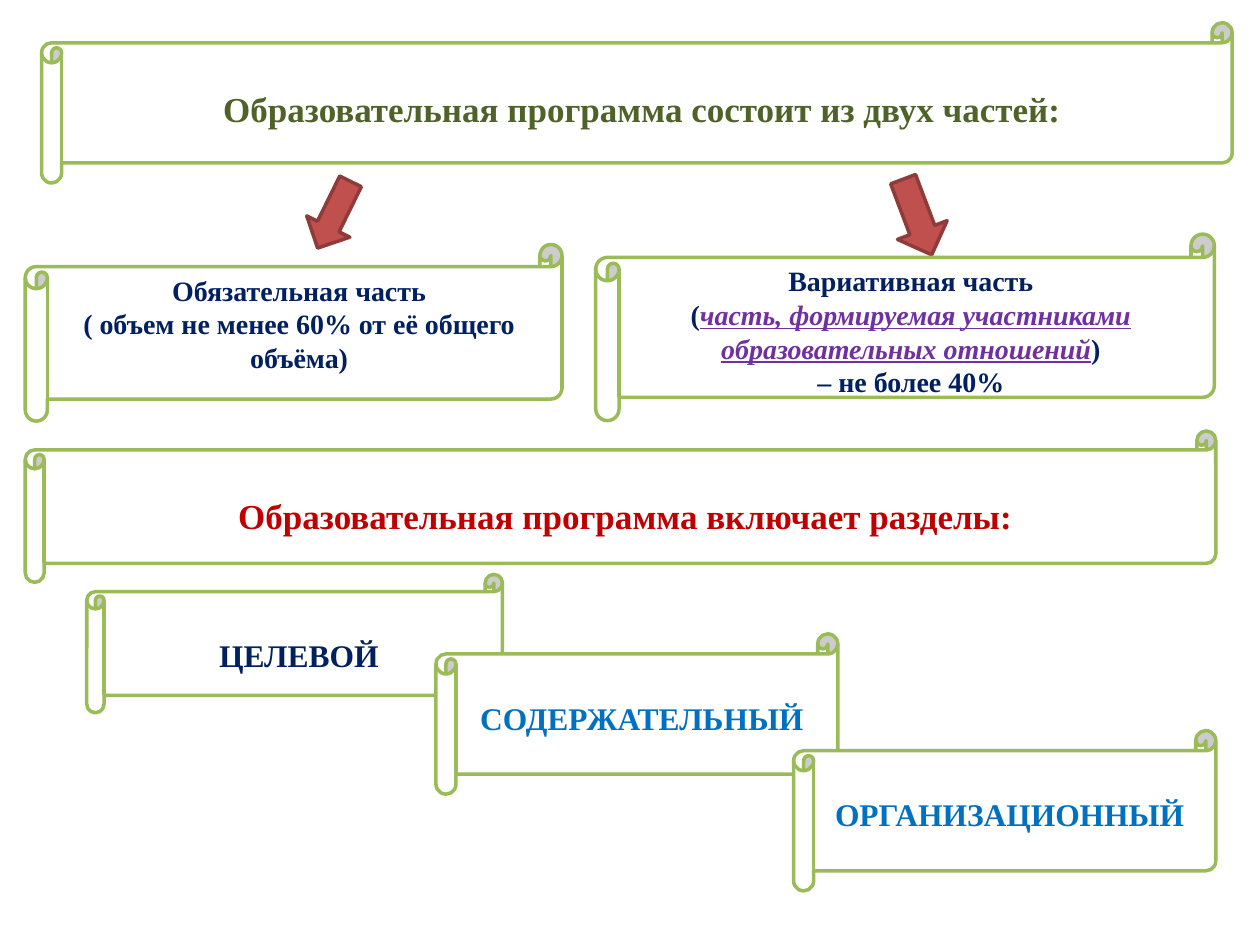
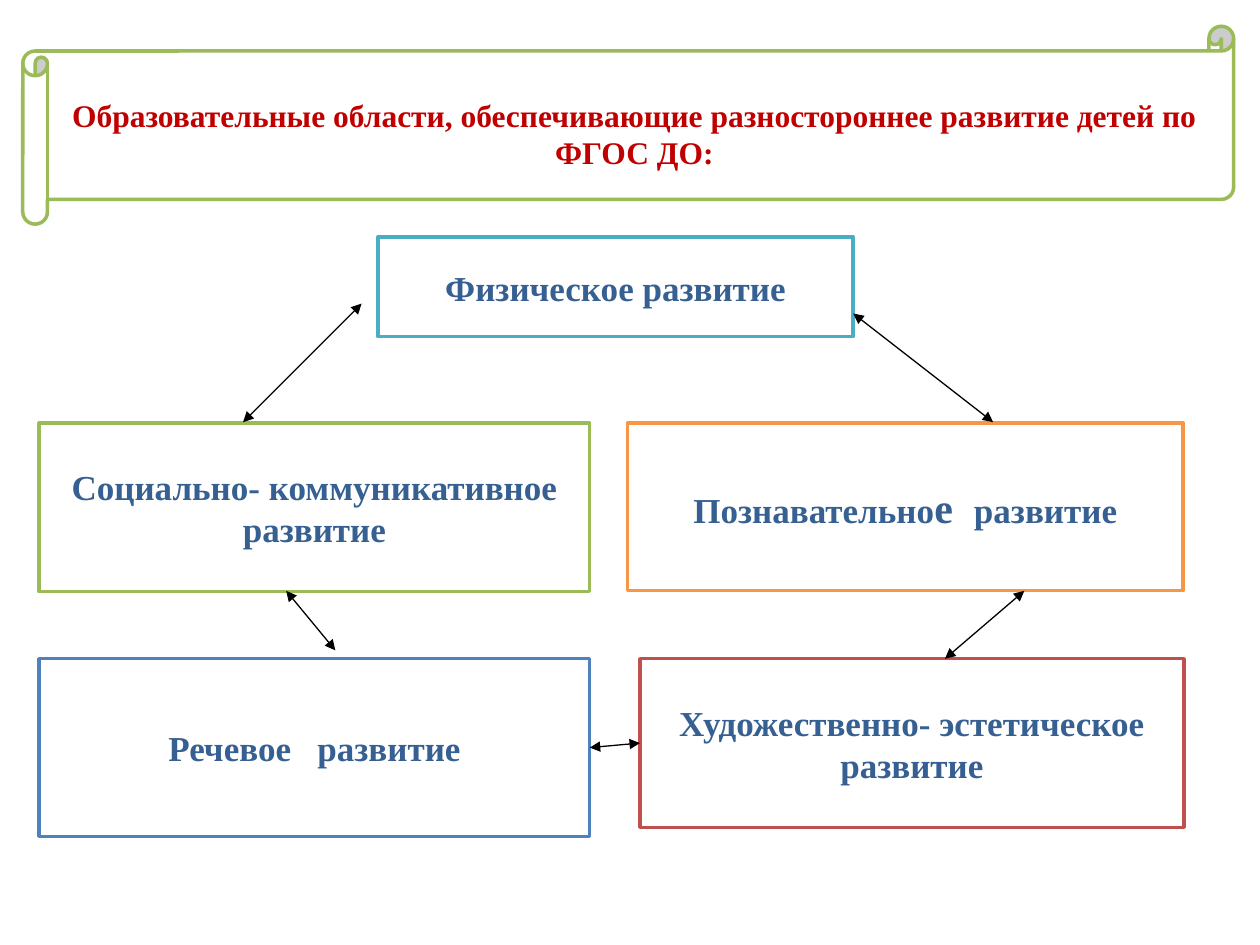
from lxml import etree
from pptx import Presentation
from pptx.dml.color import RGBColor
from pptx.enum.shapes import MSO_CONNECTOR, MSO_SHAPE
from pptx.enum.text import MSO_ANCHOR, MSO_AUTO_SIZE, PP_ALIGN
from pptx.oxml.ns import qn
from pptx.util import Cm, Pt

SCROLL = MSO_SHAPE.HORIZONTAL_SCROLL
RECTANGLE = MSO_SHAPE.RECTANGLE
DOWN_ARROW = MSO_SHAPE.DOWN_ARROW
STRAIGHT = MSO_CONNECTOR.STRAIGHT
TOP, MIDDLE = MSO_ANCHOR.TOP, MSO_ANCHOR.MIDDLE
CENTER = PP_ALIGN.CENTER
NO_AUTOFIT = MSO_AUTO_SIZE.NONE

COLORS = {
    "white": "FFFFFF", "black": "000000", "green": "9BBB59", "olive": "4F6228",
    "navy": "002060", "purple": "7030A0", "crimson": "C00000", "sky": "0070C0",
    "steel": "376092", "teal": "4BACC6", "orange": "F79646", "blue": "4F81BD",
    "red": "C0504D", "dark red": "8E3B39",
}
FONT = "Times New Roman"
LOW_TEXT = 0.9    # top inset of a scroll with one heading
HIGH_TEXT = 0.13  # top inset of a scroll with several lines
SCROLL_CURL = 0.125  # curl width as a share of the scroll height
RIGHT, LEFT = 3, 1


def add_box(slide, preset, place, line, fill="white"):
    shape = slide.shapes.add_shape(preset, *[Cm(length) for length in place])
    shape.shadow.inherit = False
    shape.fill.solid()
    shape.fill.fore_color.rgb = RGBColor.from_string(COLORS[fill])
    shape.line.color.rgb = RGBColor.from_string(COLORS[line])
    shape.line.width = Pt(2)
    return shape


def write_text(shape, lines, size, color, anchor=TOP, top_inset=HIGH_TEXT, wrap=True):
    """Write one centred paragraph per line; a bar inside a line parts its runs."""
    text_frame = shape.text_frame
    text_frame.auto_size = NO_AUTOFIT
    text_frame.word_wrap = wrap
    text_frame.vertical_anchor = anchor
    text_frame.margin_top = Cm(top_inset)
    text_frame.text = "\n".join(line.replace("|", "") for line in lines)
    for paragraph, line in zip(text_frame.paragraphs, lines):
        paragraph.alignment = CENTER
        first, *others = line.split("|")
        paragraph.runs[0].text = first
        for piece in others:
            paragraph.add_run().text = piece
        for run in paragraph.runs:
            run.font.name = FONT
            run.font.size = Pt(size)
            run.font.bold = True
            run.font.color.rgb = RGBColor.from_string(COLORS[color])


presentation = Presentation()
presentation.slide_width = Cm(25.4)
presentation.slide_height = Cm(19.05)
title_only = presentation.slide_layouts[5]

# Both slides: a title lying on a wide scroll
titles = [
    ("Образовательная программа состоит из двух частей:",
     (0.84, 0.46, 24, 3.23), 20, "olive"),
    ("Образовательные области, обеспечивающие разностороннее развитие детей по ФГОС ДО:",
     (0.46, 0.53, 24.41, 3.99), 18, "crimson"),
]
slides = []
for text, place, size, color in titles:
    slide = presentation.slides.add_slide(title_only)
    add_box(slide, SCROLL, place, "green")
    left, top, width, height = place
    curl = height * SCROLL_CURL
    title = slide.shapes.title
    title.left, title.top = Cm(left + curl), Cm(top + curl)
    title.width, title.height = Cm(width - 1.5 * curl), Cm(height - 2 * curl)
    write_text(title, [text], size, color, top_inset=LOW_TEXT)
    title.element.getparent().append(title.element)
    slides.append(slide)
parts_slide, areas_slide = slides

# Slide 1: two parts and three sections of the programme
for place, rotation in [((6.25, 3.58, 0.97, 1.5), 26.3), ((17.96, 3.56, 1.07, 1.63), 339.3)]:
    arrow = add_box(parts_slide, DOWN_ARROW, place, "dark red", "red")
    arrow.rotation = rotation

mandatory = add_box(parts_slide, SCROLL, (0.51, 4.93, 10.82, 3.56), "green")
write_text(mandatory, ["Обязательная часть", "( объем не менее 60% от её общего объёма)"],
           16, "navy")

variable = add_box(parts_slide, SCROLL, (12.01, 4.72, 12.47, 3.76), "green")
write_text(variable, [
    "Вариативная часть",
    "(|часть, формируемая участниками образовательных отношений|)",
    "– не более 40%",
], 16, "navy")
participants = variable.text_frame.paragraphs[1].runs[1].font
participants.italic = participants.underline = True
participants.color.rgb = RGBColor.from_string(COLORS["purple"])

sections = [
    ("Образовательная программа включает разделы:", (0.51, 8.69, 24, 3.05), 20, "crimson"),
    ("ЦЕЛЕВОЙ", (1.75, 11.58, 8.38, 2.79), 18, "navy"),
    ("СОДЕРЖАТЕЛЬНЫЙ", (8.79, 12.78, 8.1, 3.23), 18, "sky"),
    ("ОРГАНИЗАЦИОННЫЙ", (16, 14.73, 8.51, 3.23), 18, "sky"),
]
for text, place, size, color in sections:
    scroll = add_box(parts_slide, SCROLL, place, "green")
    write_text(scroll, [text], size, color, top_inset=LOW_TEXT)

# Slide 2: five areas of development
areas = {
    "physical": (["Физическое развитие"], (7.62, 4.78, 9.58, 2.01), "teal"),
    "artistic": (["Художественно- эстетическое", "развитие"], (12.9, 13.28, 10.97, 3.4), "red"),
    "cognitive": (["Познавательно|е| |развитие"], (12.65, 8.53, 11.2, 3.38), "orange"),
    "speech": (["Речевое| |развитие"], (0.79, 13.28, 11.1, 3.58), "blue"),
    "social": (["Социально- коммуникативное", "развитие"], (0.79, 8.53, 11.1, 3.4), "green"),
}
boxes = {}
for area, (lines, place, line_color) in areas.items():
    boxes[area] = add_box(areas_slide, RECTANGLE, place, line_color)
    write_text(boxes[area], lines, 20, "steel", MIDDLE, wrap=False)

cognitive_runs = boxes["cognitive"].text_frame.paragraphs[0].runs
for run in cognitive_runs[1:3]:
    run.font.size = Pt(24)
# Wider word gaps by character spacing, in hundredths of a point
speech_gap = boxes["speech"].text_frame.paragraphs[0].runs[1]
for run, spacing in [(cognitive_runs[2], 600), (speech_gap, 1000)]:
    run.font._element.set("spc", str(spacing))

links = [
    (7.29, 6.12, 4.9, 8.51),
    (17.2, 6.32, 20.02, 8.51),
    (5.77, 11.91, 6.76, 13.11),
    (19.05, 13.28, 20.65, 11.91),
    (11.89, 15.07, 12.9, 14.98),
]
for ends in links:
    connector = areas_slide.shapes.add_connector(STRAIGHT, *[Cm(length) for length in ends])
    connector.line.color.rgb = RGBColor.from_string(COLORS["black"])
    connector.line.width = Pt(0.75)
    properties = connector.element.spPr
    outline = properties.find(qn("a:ln"))
    for end in ("a:headEnd", "a:tailEnd"):
        etree.SubElement(outline, qn(end), type="triangle")
    etree.SubElement(properties, qn("a:effectLst"))
# The last link joins the facing sides of the two lower boxes
connector.begin_connect(boxes["speech"], RIGHT)
connector.end_connect(boxes["artistic"], LEFT)

presentation.save("out.pptx")
